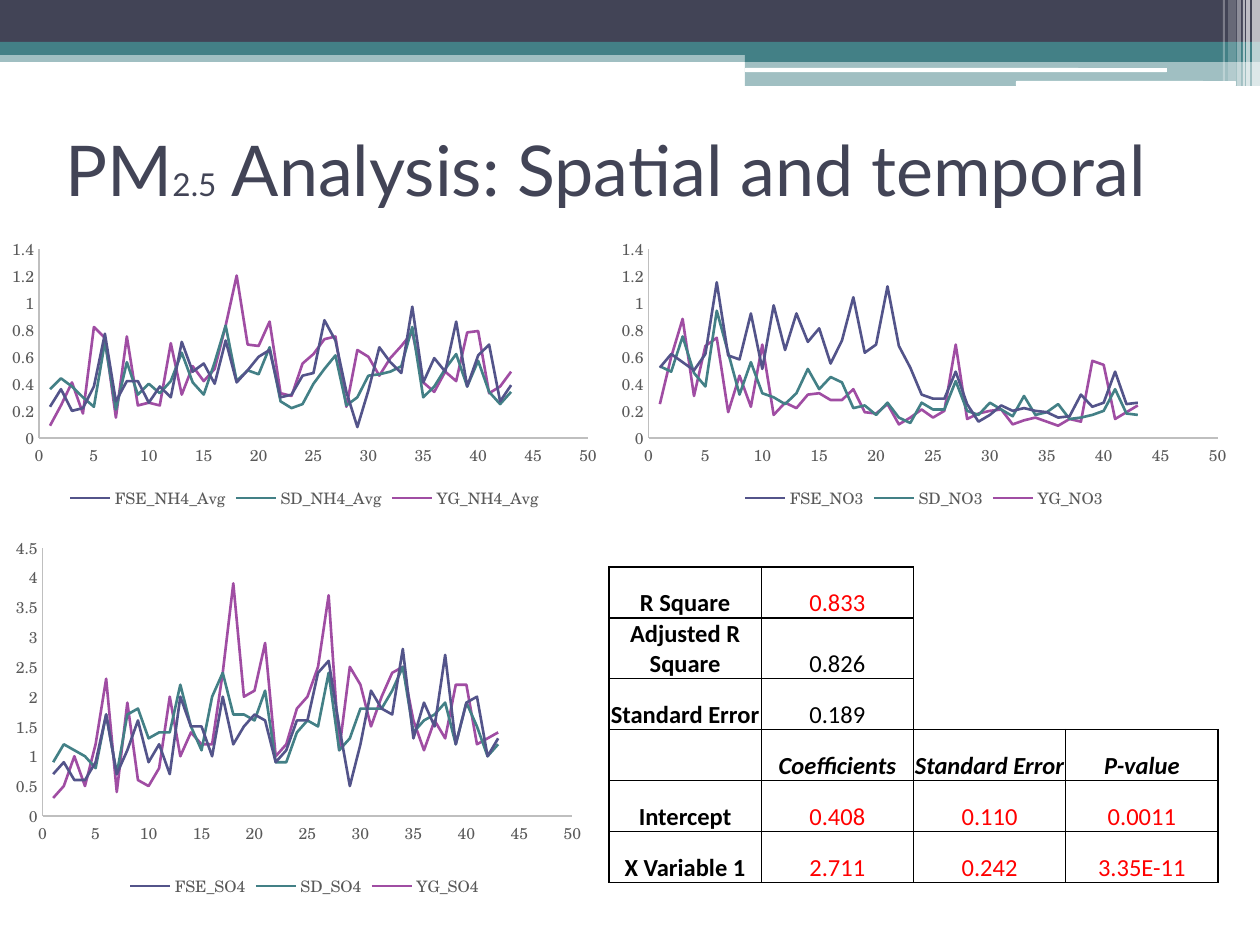
import dataclasses

import lxml.etree
import pptx
import pptx.chart.data
import pptx.dml.color
import pptx.enum.chart
import pptx.enum.shapes
import pptx.enum.text
import pptx.oxml
import pptx.oxml.ns
import pptx.util

PX_PER_INCH = 126
SHAPES = pptx.enum.shapes.MSO_SHAPE
ALIGN = pptx.enum.text.PP_ALIGN
ANCHOR = pptx.enum.text.MSO_ANCHOR
qn = pptx.oxml.ns.qn


@dataclasses.dataclass(frozen=True)
class Theme:
    ink: str = "424456"
    teal: str = "438086"
    white: str = "FFFFFF"
    black: str = "000000"
    red: str = "FF0000"
    axis_line: str = "BFBFBF"
    axis_text: str = "595959"
    series: tuple = ("53548A", "438086", "A04DA3")
    title_font: str = "Lato"
    chart_font: str = "TeX Gyre Schola"
    table_font: str = "Calibri"
    title_size: int = 40
    subscript_size: int = 18
    chart_size: int = 9
    table_size: int = 14


THEME = Theme()

BANDS = [
    (0, 50, 1260, 12, THEME.teal, 50),
    (0, 0, 1260, 42, THEME.ink, 100),
    (0, 42, 1260, 13, THEME.teal, 100),
    (745, 49, 515, 13, THEME.teal, 100),
    (745, 61, 515, 25, THEME.teal, 50),
]
HIGHLIGHTS = [(745, 68, 422, 4), (1016, 81, 220, 5)]
STRIPES = [(1252, 8, 86, 65), (1246, 4, 86, 65), (1243, 2, 86, 60),
           (1237, 4, 86, 40), (1228, 8, 81, 20), (1223, 2, 81, 30)]

AMMONIUM = {
    "FSE_NH4_Avg": [0.23, 0.36, 0.2, 0.22, 0.38, 0.77, 0.27, 0.42, 0.42, 0.26, 0.38, 0.3, 0.71, 0.49, 0.55,
                    0.4, 0.72, 0.41, 0.5, 0.6, 0.65, 0.3, 0.32, 0.46, 0.48, 0.87, 0.72, 0.34, 0.08, 0.35,
                    0.67, 0.56, 0.48, 0.97, 0.41, 0.59, 0.49, 0.86, 0.38, 0.61, 0.69, 0.27, 0.39],
    "SD_NH4_Avg": [0.36, 0.44, 0.38, 0.3, 0.23, 0.71, 0.21, 0.56, 0.32, 0.4, 0.33, 0.42, 0.63, 0.41, 0.32,
                   0.56, 0.83, 0.42, 0.5, 0.47, 0.67, 0.27, 0.22, 0.25, 0.4, 0.51, 0.61, 0.24, 0.3, 0.46,
                   0.47, 0.49, 0.53, 0.82, 0.3, 0.38, 0.51, 0.62, 0.38, 0.57, 0.34, 0.25, 0.34],
    "YG_NH4_Avg": [0.09, 0.24, 0.41, 0.18, 0.82, 0.74, 0.15, 0.75, 0.24, 0.26, 0.24, 0.7, 0.32, 0.53, 0.42,
                   0.51, 0.83, 1.2, 0.69, 0.68, 0.86, 0.33, 0.31, 0.55, 0.62, 0.73, 0.75, 0.23, 0.65, 0.6,
                   0.46, 0.59, 0.68, 0.78, 0.41, 0.34, 0.49, 0.42, 0.78, 0.79, 0.33, 0.38, 0.49],
}
NITRATE = {
    "FSE_NO3": [0.52, 0.62, 0.56, 0.5, 0.62, 1.15, 0.61, 0.58, 0.92, 0.51, 0.98, 0.65, 0.92, 0.71, 0.81,
                0.55, 0.72, 1.04, 0.63, 0.69, 1.12, 0.68, 0.52, 0.32, 0.29, 0.29, 0.49, 0.25, 0.12, 0.17,
                0.24, 0.2, 0.22, 0.2, 0.19, 0.15, 0.16, 0.32, 0.23, 0.26, 0.49, 0.25, 0.26],
    "SD_NO3": [0.53, 0.49, 0.75, 0.48, 0.38, 0.94, 0.63, 0.32, 0.56, 0.33, 0.3, 0.25, 0.33, 0.51, 0.36,
               0.45, 0.41, 0.22, 0.24, 0.17, 0.26, 0.15, 0.11, 0.26, 0.21, 0.21, 0.42, 0.2, 0.17, 0.26,
               0.21, 0.16, 0.31, 0.17, 0.19, 0.25, 0.14, 0.15, 0.17, 0.2, 0.36, 0.18, 0.17],
    "YG_NO3": [0.25, 0.6, 0.88, 0.31, 0.68, 0.74, 0.19, 0.46, 0.23, 0.69, 0.17, 0.26, 0.22, 0.32, 0.33,
               0.28, 0.28, 0.36, 0.19, 0.18, 0.25, 0.1, 0.15, 0.21, 0.15, 0.2, 0.69, 0.14, 0.18, 0.2,
               0.21, 0.1, 0.13, 0.15, 0.12, 0.09, 0.14, 0.12, 0.57, 0.54, 0.14, 0.19, 0.24],
}
SULFATE = {
    "FSE_SO4": [0.7, 0.9, 0.6, 0.6, 0.9, 1.7, 0.7, 1.1, 1.6, 0.9, 1.2, 0.7, 2, 1.5, 1.5,
                1, 2, 1.2, 1.5, 1.7, 1.6, 0.9, 1.1, 1.6, 1.6, 2.4, 2.6, 1.5, 0.5, 1.2,
                2.1, 1.8, 1.7, 2.8, 1.3, 1.9, 1.5, 2.7, 1.2, 1.9, 2, 1, 1.3],
    "SD_SO4": [0.9, 1.2, 1.1, 1, 0.8, 1.7, 0.7, 1.7, 1.8, 1.3, 1.4, 1.4, 2.2, 1.5, 1.1,
               2, 2.4, 1.7, 1.7, 1.6, 2.1, 0.9, 0.9, 1.4, 1.6, 1.5, 2.4, 1.1, 1.3, 1.8,
               1.8, 1.8, 2.1, 2.5, 1.4, 1.6, 1.7, 1.9, 1.2, 1.9, 1.5, 1, 1.2],
    "YG_SO4": [0.3, 0.5, 1, 0.5, 1.2, 2.3, 0.4, 1.9, 0.6, 0.5, 0.8, 2, 1, 1.4, 1.2,
               1.2, 2.4, 3.9, 2, 2.1, 2.9, 1, 1.2, 1.8, 2, 2.5, 3.7, 1.1, 2.5, 2.2,
               1.5, 2, 2.4, 2.5, 1.6, 1.1, 1.6, 1.3, 2.2, 2.2, 1.2, 1.3, 1.4],
}
REGRESSION = [
    ["R Square", "0.833", "", ""],
    ["Adjusted R Square", "0.826", "", ""],
    ["Standard Error", "0.189", "", ""],
    ["", "Coefficients", "Standard Error", "P-value"],
    ["Intercept", "0.408", "0.110", "0.0011"],
    ["X Variable 1", "2.711", "0.242", "3.35E-11"],
]
HEADING_ROW = 3
SIGNIFICANT_ROWS = (0, 4, 5)


def px(length):
    return pptx.util.Emu(round(length * 914400 / PX_PER_INCH))


def rgb(color):
    return pptx.dml.color.RGBColor.from_string(color)


def style_font(font, name, size, color):
    font.name = name
    font.size = pptx.util.Pt(size)
    font.color.rgb = rgb(color)


def add_block(slide, kind, box, color, opacity=100):
    block = slide.shapes.add_shape(kind, *map(px, box))
    block.shadow.inherit = False
    block.fill.solid()
    block.fill.fore_color.rgb = rgb(color)
    block.line.fill.background()
    if opacity < 100:
        swatch = block.element.spPr.find(".//" + qn("a:srgbClr"))
        lxml.etree.SubElement(swatch, qn("a:alpha"), val=str(opacity * 1000))


def add_header(slide, box):
    left, top = box
    for x, y, width, height, color, opacity in BANDS:
        add_block(slide, SHAPES.RECTANGLE, (left + x, top + y, width, height), color, opacity)
    for x, y, width, height in HIGHLIGHTS:
        add_block(slide, SHAPES.ROUNDED_RECTANGLE, (left + x, top + y, width, height), THEME.white)
    for x, width, height, opacity in STRIPES:
        add_block(slide, SHAPES.RECTANGLE, (left + x, top, width, height), THEME.white, opacity)


def add_title(slide, box):
    title = slide.shapes.title
    title.left, title.top, title.width, title.height = map(px, box)
    title.text_frame.word_wrap = True
    title.text_frame.vertical_anchor = ANCHOR.MIDDLE
    heading = title.text_frame.paragraphs[0]
    heading.alignment = ALIGN.LEFT
    for text, size in (("PM", THEME.title_size), ("2.5", THEME.subscript_size),
                       (" Analysis: Spatial and temporal", THEME.title_size)):
        run = heading.add_run()
        run.text = text
        style_font(run.font, THEME.title_font, size, THEME.ink)


def set_plot_layout(chart, fractions):
    plot_area = chart._chartSpace.find(".//" + qn("c:plotArea"))
    for layout in plot_area.findall(qn("c:layout")):
        plot_area.remove(layout)
    layout = plot_area.makeelement(qn("c:layout"))
    plot_area.insert(0, layout)
    manual = lxml.etree.SubElement(layout, qn("c:manualLayout"))
    settings = [("layoutTarget", "inner"), ("xMode", "edge"), ("yMode", "edge"), *zip("xywh", fractions)]
    for tag, value in settings:
        lxml.etree.SubElement(manual, qn("c:" + tag), val=str(value))


def fill_chart(chart, color):
    area = pptx.oxml.parse_xml(
        f'<c:spPr {pptx.oxml.ns.nsdecls("c", "a")}><a:solidFill><a:srgbClr val="{color}"/></a:solidFill>'
        '<a:ln><a:noFill/></a:ln></c:spPr>')
    chart._chartSpace.find(qn("c:chart")).addnext(area)


def add_trend_chart(slide, box, readings, top_value, step, fill=None, plot=None):
    data = pptx.chart.data.XyChartData()
    for site, values in readings.items():
        series = data.add_series(site)
        for day, value in enumerate(values, 1):
            series.add_data_point(day, value)
    kind = pptx.enum.chart.XL_CHART_TYPE.XY_SCATTER_SMOOTH_NO_MARKERS
    chart = slide.shapes.add_chart(kind, *map(px, box), data).chart
    style_font(chart.font, THEME.chart_font, THEME.chart_size, THEME.axis_text)
    chart.has_title = False
    chart.has_legend = True
    chart.legend.position = pptx.enum.chart.XL_LEGEND_POSITION.BOTTOM
    chart.legend.include_in_layout = False
    style_font(chart.legend.font, THEME.chart_font, THEME.chart_size, THEME.axis_text)
    chart.plots[0].vary_by_categories = False
    for axis, maximum, unit in ((chart.category_axis, 50, 5), (chart.value_axis, top_value, step)):
        axis.minimum_scale, axis.maximum_scale, axis.major_unit = 0, maximum, unit
        axis.has_major_gridlines = False
        axis.major_tick_mark = axis.minor_tick_mark = pptx.enum.chart.XL_TICK_MARK.NONE
        axis.tick_labels.number_format = "General"
        axis.tick_labels.number_format_is_linked = False
        axis.format.line.color.rgb = rgb(THEME.axis_line)
        axis.format.line.width = pptx.util.Pt(0.75)
        style_font(axis.tick_labels.font, THEME.chart_font, THEME.chart_size, THEME.axis_text)
    for series, color in zip(chart.plots[0].series, THEME.series):
        series.format.line.color.rgb = rgb(color)
        series.format.line.width = pptx.util.Pt(1.5)
    if fill:
        fill_chart(chart, fill)
    if plot:
        set_plot_layout(chart, plot)


def set_borders(cell, sides):
    properties = cell._tc.get_or_add_tcPr()
    for position, side in enumerate("LRTB"):
        paint = f'<a:solidFill><a:srgbClr val="{THEME.black}"/></a:solidFill>' if side in sides else "<a:noFill/>"
        border = pptx.oxml.parse_xml(f'<a:ln{side} {pptx.oxml.ns.nsdecls("a")} w="12700">{paint}</a:ln{side}>')
        properties.insert(position, border)


def add_regression_table(slide, box):
    table = slide.shapes.add_table(len(REGRESSION), len(REGRESSION[0]), *map(px, box)).table
    table.first_row = table.horz_banding = False
    for r, texts in enumerate(REGRESSION):
        table.rows[r].height = px(60 if r == 1 else 51)
        for c, text in enumerate(texts):
            cell = table.cell(r, c)
            cell.fill.background()
            cell.vertical_anchor = ANCHOR.BOTTOM
            cell.margin_left = cell.margin_right = cell.margin_top = px(1)
            cell.margin_bottom = 0
            cell.text = text
            entry = cell.text_frame.paragraphs[0]
            entry.alignment = ALIGN.CENTER
            for run in entry.runs:
                significant = c > 0 and r in SIGNIFICANT_ROWS
                style_font(run.font, THEME.table_font, THEME.table_size, THEME.red if significant else THEME.black)
                run.font.bold = c == 0 or r == HEADING_ROW
                run.font.italic = r == HEADING_ROW
            outside = r < HEADING_ROW and c > 1
            set_borders(cell, ("L" if c == 2 else "") + ("B" if r == HEADING_ROW - 1 else "") if outside else "LRTB")


def main():
    deck = pptx.Presentation()
    deck.slide_width, deck.slide_height = px(1260), px(945)
    slide = deck.slides.add_slide(deck.slide_layouts[5])
    add_header(slide, (0, 0))
    add_title(slide, (53, 95, 1134, 147))
    add_trend_chart(slide, (0, 231, 609, 284), AMMONIUM, 1.4, 0.2, fill=THEME.white)
    add_trend_chart(slide, (609, 231, 630, 284), NITRATE, 1.4, 0.2, fill=THEME.white)
    add_trend_chart(slide, (0, 525, 609, 378), SULFATE, 4.5, 0.5, plot=(0.07, 0.06, 0.87, 0.71))
    add_regression_table(slide, (609, 567, 609, 315))
    deck.save("out.pptx")


if __name__ == "__main__":
    main()
